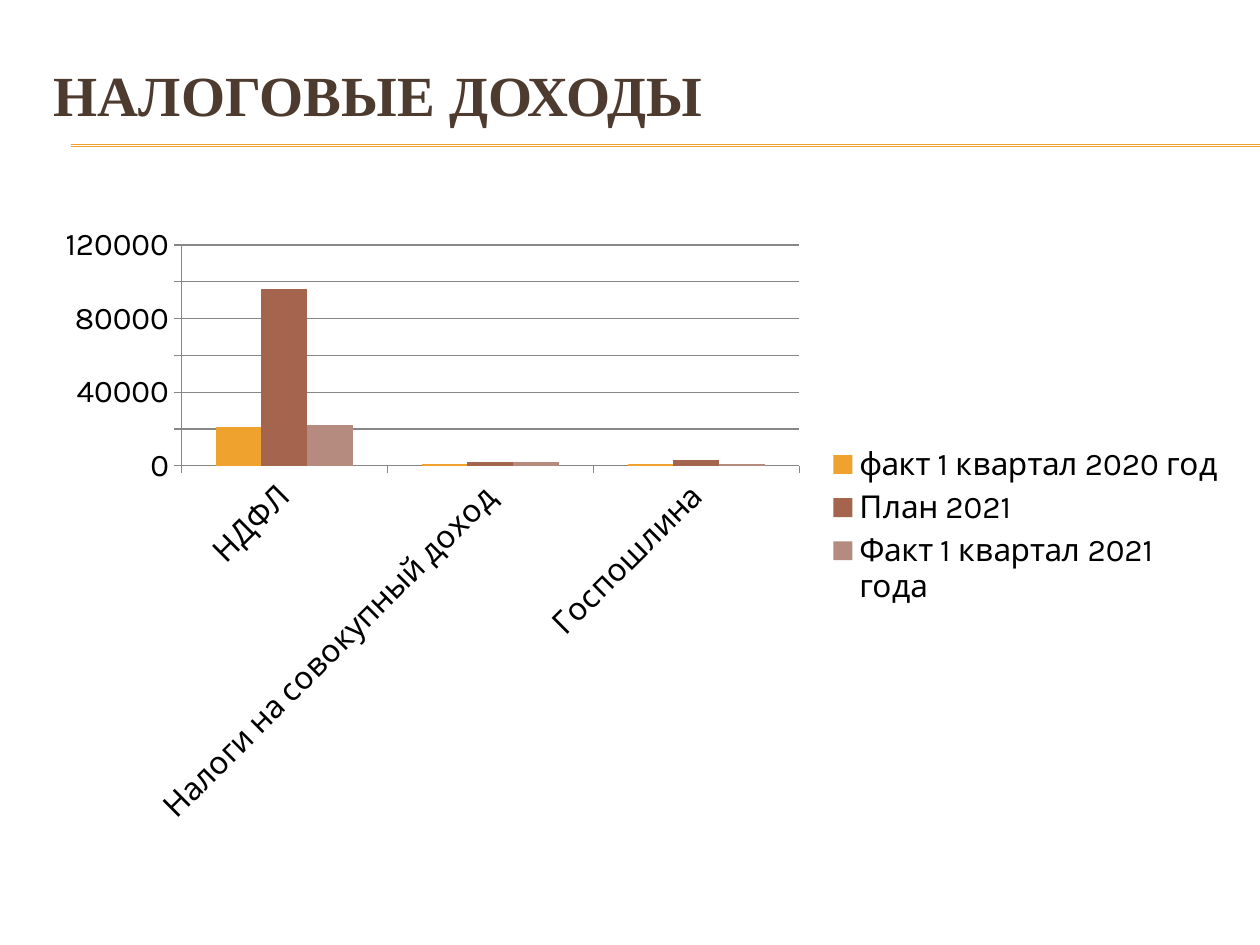
from lxml.etree import SubElement
from pptx import Presentation
from pptx.chart.data import CategoryChartData
from pptx.dml.color import RGBColor
from pptx.enum.chart import XL_CHART_TYPE as ChartType
from pptx.enum.chart import XL_LEGEND_POSITION as LegendPosition
from pptx.enum.chart import XL_TICK_MARK as TickMark
from pptx.enum.shapes import MSO_CONNECTOR as Connector
from pptx.enum.text import MSO_ANCHOR as Anchor
from pptx.oxml.ns import qn
from pptx.util import Inches, Pt

COLORS = {
    "title": "4E3B30",
    "text": "000000",
    "rule": "F0A22E",
    "axis": "878787",
    "fact_2020": "F0A22E",
    "plan_2021": "A5644E",
    "fact_2021": "B58B80",
}
FONTS = {"title": "Times New Roman", "chart": "Karla"}
WIDTH, HEIGHT = 10, 7.5

CATEGORIES = ["НДФЛ", "Налоги на совокупный доход", "Госпошлина"]
SERIES = [
    ("факт 1 квартал 2020 год", "fact_2020", (21000, 1000, 1000)),
    ("План 2021", "plan_2021", (96000, 2000, 3000)),
    ("Факт 1 квартал 2021 года", "fact_2021", (22000, 2000, 1000)),
]


def color(name):
    return RGBColor.from_string(COLORS[name])


def apply(target, values):
    for name, value in values.items():
        setattr(target, name, value)


class SlideBuilder:
    """Places styled elements on one slide; lengths are percent of its size."""

    def __init__(self, presentation):
        self.width = presentation.slide_width
        self.height = presentation.slide_height
        self.slide = presentation.slides.add_slide(presentation.slide_layouts[6])

    def x(self, share):
        return round(self.width * share / 100)

    def y(self, share):
        return round(self.height * share / 100)

    def box(self, left, top, width, height):
        return self.x(left), self.y(top), self.x(width), self.y(height)

    def font(self, font, face, size, color_name, bold=False):
        apply(font, {"name": FONTS[face], "size": Pt(size), "bold": bold})
        font.color.rgb = color(color_name)

    def title(self, text, *area):
        frame = self.slide.shapes.add_textbox(*self.box(*area)).text_frame
        apply(frame, {"word_wrap": True, "vertical_anchor": Anchor.TOP,
                      "margin_top": 0, "margin_bottom": 0})
        run = frame.paragraphs[0].add_run()
        run.text = text
        self.font(run.font, "title", 32.4, "title", bold=True)

    def rule(self, left, right, level):
        line = self.slide.shapes.add_connector(
            Connector.STRAIGHT, self.x(left), self.y(level), self.x(right), self.y(level))
        line.line.color.rgb = color("rule")
        line.line.width = Pt(0.75)
        SubElement(line._element.spPr, qn("a:effectLst"))

    def column_chart(self, categories, series_rows, *area):
        data = CategoryChartData(number_format="General")
        data.categories = categories
        for name, _, values in series_rows:
            data.add_series(name, values)
        chart = self.slide.shapes.add_chart(
            ChartType.COLUMN_CLUSTERED, *self.box(*area), data).chart
        self.font(chart.font, "chart", 18, "text")
        apply(chart, {"has_title": False, "has_legend": True})
        apply(chart.legend, {"position": LegendPosition.RIGHT, "include_in_layout": False})

        plot = chart.plots[0]
        apply(plot, {"gap_width": 150, "overlap": 0, "vary_by_categories": False})
        for series, (_, color_name, _) in zip(plot.series, series_rows):
            series.format.fill.solid()
            series.format.fill.fore_color.rgb = color(color_name)

        value_axis, category_axis = chart.value_axis, chart.category_axis
        value_axis.has_major_gridlines = True
        for axis in (value_axis, category_axis):
            apply(axis, {"major_tick_mark": TickMark.OUTSIDE,
                         "minor_tick_mark": TickMark.NONE})
        for part in (value_axis, category_axis, value_axis.major_gridlines):
            part.format.line.color.rgb = color("axis")
            part.format.line.width = Pt(0.75)


def main():
    presentation = Presentation()
    apply(presentation, {"slide_width": Inches(WIDTH), "slide_height": Inches(HEIGHT)})
    builder = SlideBuilder(presentation)
    for level in (15.33, 15.47):
        builder.rule(5.6, 100, level)
    builder.title("НАЛОГОВЫЕ ДОХОДЫ", 3.3, 6.3, 95, 12.3)
    builder.column_chart(CATEGORIES, SERIES, 3.3, 22.67, 95, 66)
    presentation.save("out.pptx")


if __name__ == "__main__":
    main()
